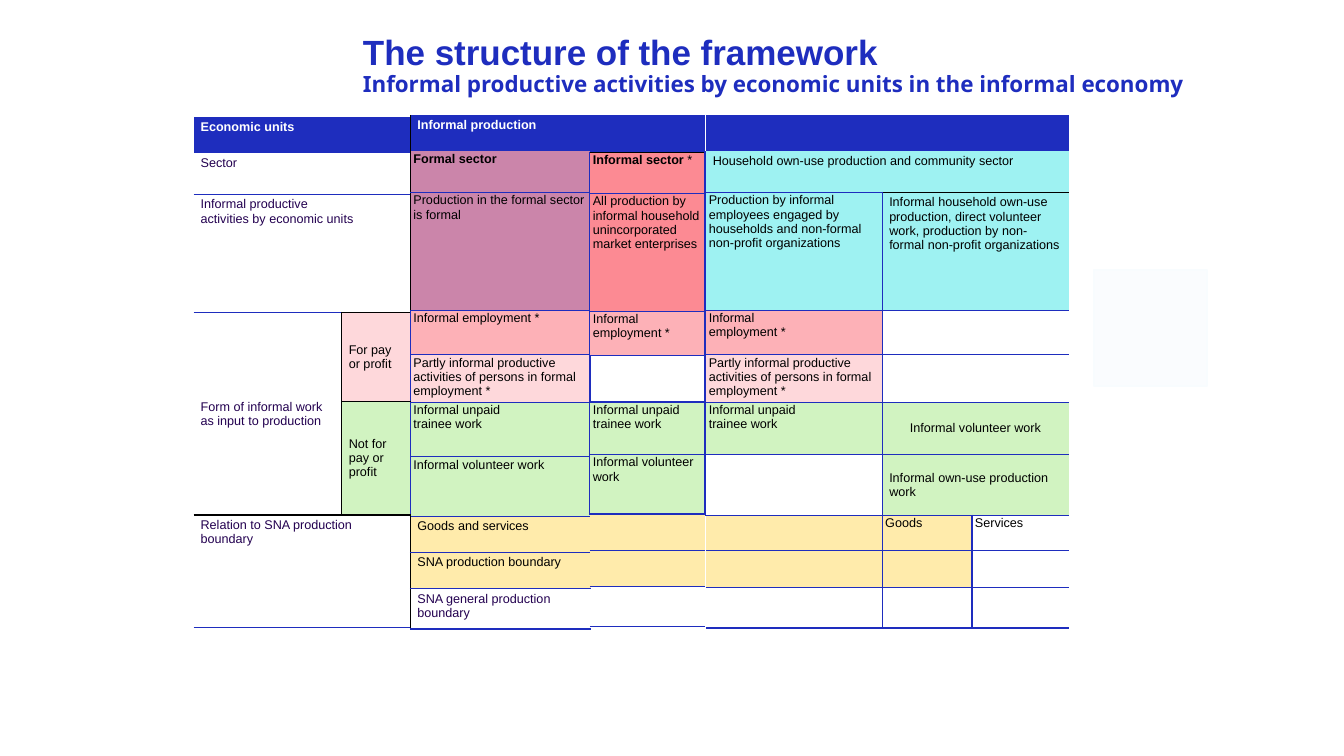
from dataclasses import dataclass

from lxml.etree import SubElement
from pptx import Presentation
from pptx.dml.color import RGBColor
from pptx.enum.shapes import MSO_SHAPE
from pptx.enum.text import MSO_ANCHOR, PP_ALIGN
from pptx.oxml.ns import qn
from pptx.util import Inches, Pt

BLUE = RGBColor(0x1E, 0x2D, 0xBE)
BLACK = RGBColor(0, 0, 0)
WHITE = RGBColor(255, 255, 255)
INDIGO = RGBColor(0x23, 0x00, 0x50)
MAUVE = RGBColor(0xCB, 0x85, 0xAA)
RED = RGBColor(0xFC, 0x8A, 0x93)
PINK = RGBColor(0xFD, 0xB1, 0xB7)
PALE_PINK = RGBColor(0xFE, 0xD8, 0xDB)
GREEN = RGBColor(0xD1, 0xF3, 0xC1)
YELLOW = RGBColor(0xFF, 0xEB, 0xAB)
CYAN = RGBColor(0x9E, 0xF2, 0xF2)
ICE = RGBColor(0xF8, 0xFC, 0xFE)
NO_GRID_STYLE = "{2D5ABB26-0587-4C30-8999-92F81FD0307C}"

PARTLY_INFORMAL = "Partly informal productive activities of persons in formal employment *"
TRAINEE = "Informal unpaid\vtrainee work"


@dataclass
class Entry:
    """Cell content; border letters l, r, t, b are blue, capitals are black."""
    text: str = ""
    fill: RGBColor = None
    borders: str = "lrtb"
    color: RGBColor = BLACK
    bold: bool = False
    wide: bool = False
    middle: bool = False
    align: PP_ALIGN = PP_ALIGN.LEFT
    columns: int = 1
    rows: int = 1
    note: str = ""


def header(text="", columns=1, borders=""):
    return Entry(text, BLUE, borders, WHITE, bold=True, wide=True, columns=columns)


def label(text, borders, **options):
    return Entry(text, None, borders, INDIGO, wide=True, **options)


def draw_border(cell, side, color):
    line = SubElement(cell._tc.get_or_add_tcPr(), qn("a:ln" + side), w=str(Pt(1)))
    fill = SubElement(line, qn("a:solidFill"))
    SubElement(fill, qn("a:srgbClr"), val=str(color))


def draw_borders(table, top, left, entry):
    bottom, right = top + entry.rows - 1, left + entry.columns - 1
    for row in range(top, bottom + 1):
        for column in range(left, right + 1):
            outer = {"L": column == left, "R": column == right,
                     "T": row == top, "B": row == bottom}
            for side, is_outer in outer.items():
                if is_outer and side in entry.borders.upper():
                    color = BLACK if side in entry.borders else BLUE
                    draw_border(table.cell(row, column), side, color)


def fill_cell(cell, entry):
    if entry.fill is None:
        cell.fill.background()
    else:
        cell.fill.solid()
        cell.fill.fore_color.rgb = entry.fill
    cell.margin_left = cell.margin_right = Inches(0.07 if entry.wide else 0.03)
    cell.margin_top = cell.margin_bottom = Inches(0.03 if entry.wide else 0.01)
    cell.vertical_anchor = MSO_ANCHOR.MIDDLE if entry.middle else MSO_ANCHOR.TOP
    paragraph = cell.text_frame.paragraphs[0]
    paragraph.alignment = entry.align
    paragraph.font.size, paragraph.font.name = Pt(9), "Arial"
    paragraph.font.bold = entry.bold
    paragraph.font.color.rgb = entry.color
    if entry.text:
        paragraph.text = entry.text
    if entry.note:
        run = paragraph.add_run()
        run.text = entry.note
        run.font.bold = False


def add_grid(slide, left, top, widths, heights, entries):
    """Place a table at (left, top); None marks a cell covered by a merge."""
    frame = slide.shapes.add_table(len(heights), len(widths), Inches(left), Inches(top),
                                   Inches(sum(widths)), Inches(sum(heights)))
    table = frame.table
    table.first_row = table.horz_banding = False
    table._tbl.tblPr.find(qn("a:tableStyleId")).text = NO_GRID_STYLE
    for column, width in zip(table.columns, widths):
        column.width = Inches(width)
    for row, height in zip(table.rows, heights):
        row.height = Inches(height)
    for i, row in enumerate(entries):
        for j, entry in enumerate(row):
            if entry is None:
                continue
            cell = table.cell(i, j)
            if entry.rows * entry.columns > 1:
                cell.merge(table.cell(i + entry.rows - 1, j + entry.columns - 1))
            draw_borders(table, i, j, entry)
            fill_cell(cell, entry)


def add_title(slide, left, top, width, height):
    frame = slide.shapes.add_textbox(Inches(left), Inches(top),
                                     Inches(width), Inches(height)).text_frame
    frame.word_wrap = True
    frame.margin_left = frame.margin_right = frame.margin_top = frame.margin_bottom = 0
    paragraph = frame.paragraphs[0]
    paragraph.line_spacing = 0.9
    paragraph.font.bold = True
    paragraph.font.color.rgb = BLUE
    title = paragraph.add_run()
    title.text = "The structure of the framework"
    title.font.size, title.font.name = Pt(25), "Arial"
    paragraph.add_line_break()
    subtitle = paragraph.add_run()
    subtitle.text = "Informal productive activities by economic units in the informal economy"
    subtitle.font.size, subtitle.font.name = Pt(16), "Noto Sans"


def add_pale_square(slide, left, top, width, height):
    shape = slide.shapes.add_shape(MSO_SHAPE.RECTANGLE, Inches(left), Inches(top),
                                   Inches(width), Inches(height))
    shape.shadow.inherit = False
    shape.fill.solid()
    shape.fill.fore_color.rgb = shape.line.color.rgb = ICE
    shape.line.width = Pt(1)
    color = shape._element.spPr.find(qn("a:solidFill")).find(qn("a:srgbClr"))
    SubElement(color, qn("a:alpha"), val="70000")


def add_formal_sector(slide, left, top):
    add_grid(slide, left, top, [1.79], [0.36, 0.41, 1.17, 0.44, 0.44, 0.54, 0.59, 0.36, 0.36, 0.4], [
        [header("Informal production", borders="L")],
        [Entry("Formal sector", MAUVE, "Lrb", bold=True)],
        [Entry("Production in the formal sector is formal", MAUVE, "Lrtb")],
        [Entry("Informal employment *", PINK)],
        [Entry(PARTLY_INFORMAL, PALE_PINK)],
        [Entry(TRAINEE, GREEN)],
        [Entry("Informal volunteer work", GREEN)],
        [Entry("Goods and services", YELLOW, "Ltb", wide=True)],
        [Entry("SNA production boundary", YELLOW, "Ltb", wide=True)],
        [label("SNA general production boundary", "Ltb")]])


def add_informal_sector(slide, left, top):
    add_grid(slide, left, top, [1.14], [0.37, 0.41, 1.17, 0.44, 0.46, 0.52, 0.59, 0.36, 0.36, 0.4], [
        [header()],
        [Entry("Informal sector ", RED, "lrTb", bold=True, note="*")],
        [Entry("All production by\vinformal household\vunincorporated\vmarket enterprises", RED)],
        [Entry("Informal employment *", PINK)],
        [Entry()],
        [Entry(TRAINEE, GREEN)],
        [Entry("Informal volunteer\vwork", GREEN)],
        [Entry(fill=YELLOW, borders="tb")],
        [Entry(fill=YELLOW, borders="tb")],
        [Entry(borders="tb")]])


def add_household_sector(slide, left, top):
    add_grid(slide, left, top, [1.75, 0.89, 0.96],
             [0.36, 0.41, 1.17, 0.44, 0.44, 0.52, 0.6, 0.35, 0.37, 0.4], [
        [header(columns=3), None, None],
        [Entry("Household own-use production and community sector", CYAN, "lb", wide=True, columns=3),
         None, None],
        [Entry("Production by informal employees engaged by households and non-formal "
               "non-profit organizations", CYAN),
         Entry("Informal household own-use production, direct volunteer work, production by "
               "non-formal non-profit organizations", CYAN, "lTb", wide=True, columns=2), None],
        [Entry("Informal\vemployment *", PINK), Entry(borders="ltb", columns=2), None],
        [Entry(PARTLY_INFORMAL, PALE_PINK), Entry(borders="ltb", columns=2), None],
        [Entry(TRAINEE, GREEN),
         Entry("Informal volunteer work", GREEN, "ltb", wide=True, middle=True,
               align=PP_ALIGN.CENTER, columns=2), None],
        [Entry(), Entry("Informal own-use production work", GREEN, "ltb", wide=True,
                        middle=True, columns=2), None],
        [Entry(fill=YELLOW, borders="rtb"), Entry("Goods", YELLOW), Entry("Services", borders="ltb")],
        [Entry(fill=YELLOW, borders="rtb"), Entry(fill=YELLOW), Entry(borders="ltb")],
        [Entry(borders="rtb"), Entry(), Entry(borders="ltb")]])


def add_economic_units(slide, left, top):
    add_grid(slide, left, top, [1.47, 0.68], [0.36, 0.41, 1.17, 0.88, 1.13, 1.12], [
        [header("Economic units", columns=2, borders="r"), None],
        [label("Sector", "rb", columns=2), None],
        [label("Informal productive\vactivities by economic units", "rtb", columns=2), None],
        [label("Form of informal work as input to production", "rtB", middle=True, rows=2),
         Entry("For pay\vor profit", PALE_PINK, "LrTB", wide=True, middle=True)],
        [None, Entry("Not for pay or profit", GREEN, "LrTB", wide=True, middle=True)],
        [label("Relation to SNA production boundary", "rTb", columns=2), None]])


def main():
    presentation = Presentation()
    presentation.slide_width, presentation.slide_height = Inches(13.33), Inches(7.5)
    slide = presentation.slides.add_slide(presentation.slide_layouts[6])
    add_title(slide, 3.6, 0.35, 9.5, 0.79)
    add_formal_sector(slide, 4.07, 1.14)
    add_pale_square(slide, 10.85, 2.68, 1.12, 1.15)
    add_informal_sector(slide, 5.85, 1.14)
    add_household_sector(slide, 7, 1.14)
    add_economic_units(slide, 1.92, 1.16)
    presentation.save("out.pptx")


if __name__ == "__main__":
    main()
